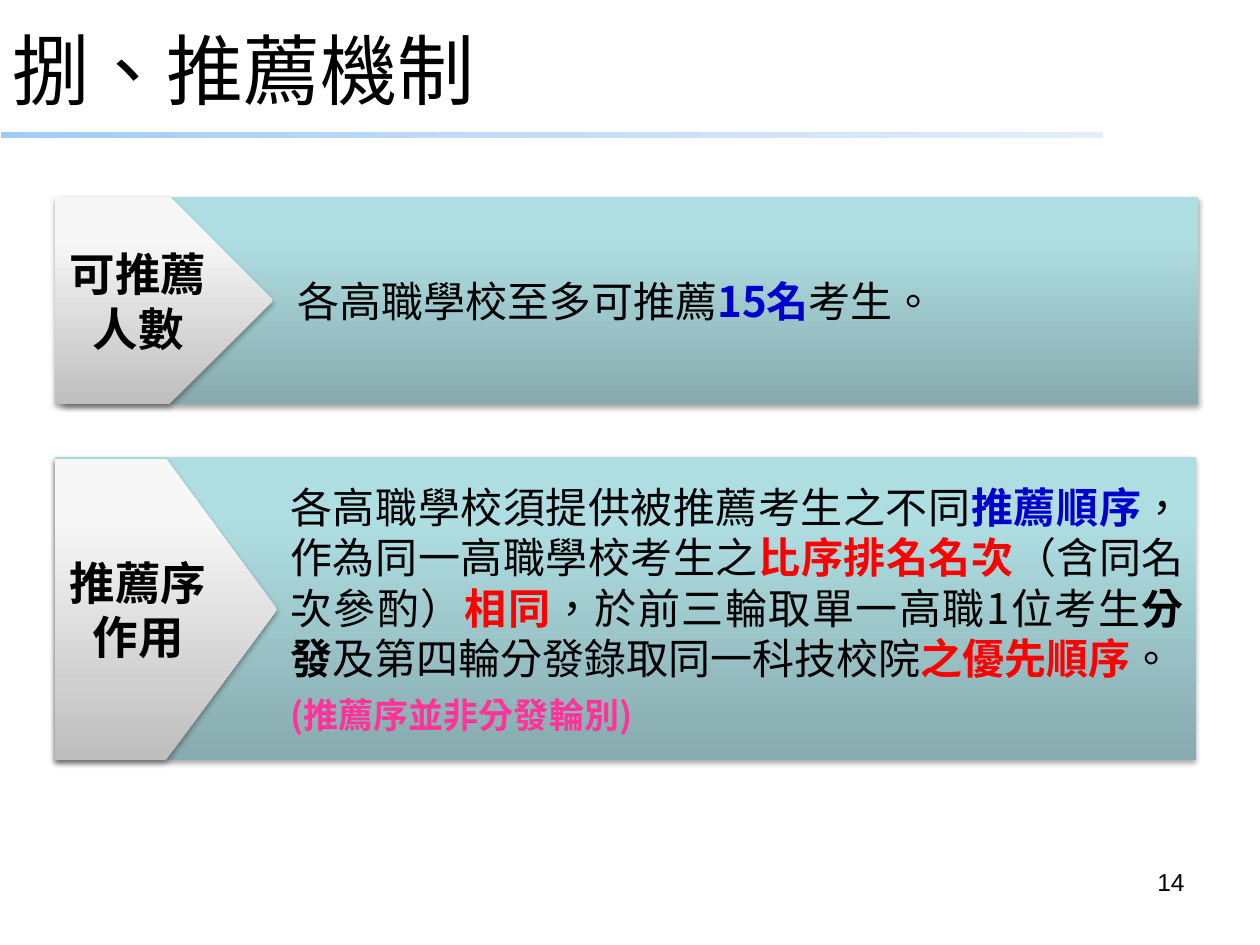
from lxml.etree import SubElement
from pptx import Presentation
from pptx.dml.color import RGBColor
from pptx.enum.shapes import MSO_SHAPE
from pptx.enum.text import MSO_ANCHOR, PP_ALIGN
from pptx.oxml.ns import qn
from pptx.util import Pt

PX = 914400 / 126
SANS = "Noto Sans CJK SC"
BLACK, BLUE, RED, PINK = "000000", "0000CC", "FF0000", "FF3399"
TEAL = [(0, "87ABAE"), (80, "AFDEE2"), (100, "AFE0E4")]
GREY = [(0, "BEBEBE"), (80, "F7F7F7"), (100, "F8F8F8")]
SKY = [(0, "9FCCF6"), (50, "C4DEF8"), (100, "E2EEFB")]


def add_gradient_shape(kind, box, stops, angle, shadow=True):
    sp = s.shapes.add_shape(kind, *[round(v * PX) for v in box])
    sp.line.fill.background()
    sp.fill.gradient()
    sp.fill.gradient_angle = angle
    props = sp._element.spPr
    stop_list = props.find(qn("a:gradFill")).find(qn("a:gsLst"))
    for old in list(stop_list):
        stop_list.remove(old)
    for pos, color in stops:
        stop = SubElement(stop_list, qn("a:gs"), pos=str(pos * 1000))
        SubElement(stop, qn("a:srgbClr"), val=color)
    sp.shadow.inherit = False
    if shadow:
        outer = SubElement(props.find(qn("a:effectLst")), qn("a:outerShdw"),
                           blurRad=str(Pt(3.1)), dist=str(Pt(1.8)),
                           dir="5400000", rotWithShape="0")
        color = SubElement(outer, qn("a:srgbClr"), val=BLACK)
        SubElement(color, qn("a:alpha"), val="35000")
    sp.text_frame.word_wrap = True
    sp.text_frame.vertical_anchor = MSO_ANCHOR.MIDDLE
    return sp


def add_run(p, text, size, color=BLACK, bold=False, font=SANS):
    r = p.add_run()
    r.text = text
    r.font.size = Pt(size)
    r.font.bold = bold
    r.font.color.rgb = RGBColor.from_string(color)
    r.font.name = font
    props = r._r.get_or_add_rPr()
    props.set("lang", "zh-TW")
    SubElement(props, qn("a:ea"), typeface=font)


prs = Presentation()
prs.slide_width, prs.slide_height = round(1260 * PX), round(945 * PX)
s = prs.slides.add_slide(prs.slide_layouts[6])

# Title, rule below it and page number
add_gradient_shape(MSO_SHAPE.RECTANGLE, (1, 132, 1102, 6), SKY, 45, shadow=False)
for box, text, size, font, align, anchor in [
    ((0, 25, 1134, 87), "捌、推薦機制", 44, "Noto Sans CJK JP",
     PP_ALIGN.LEFT, MSO_ANCHOR.MIDDLE),
    ((903, 861, 294, 65), "14", 14, "Arial", PP_ALIGN.RIGHT, MSO_ANCHOR.TOP),
]:
    tf = s.shapes.add_textbox(*[round(v * PX) for v in box]).text_frame
    tf.word_wrap = True
    tf.vertical_anchor = anchor
    tf.paragraphs[0].alignment = align
    add_run(tf.paragraphs[0], text, size, font=font)

# Teal bars: box, alignment, left margin, first-line indent, paragraphs of runs
bars = [
    ((62, 197, 1136, 207), PP_ALIGN.LEFT, 0, 223, [[
        ("各高職學校至多可推薦", 24), ("15名", 24, BLUE, True), ("考生。", 24)]]),
    ((55, 457, 1141, 303), PP_ALIGN.JUSTIFY, 223, 0, [[
        ("各高職學校須提供被推薦考生之不同", 24),
        ("推薦順序", 24, BLUE, True),
        ("，作為同一高職學校考生之", 24),
        ("比序排名名次", 24, RED, True),
        ("（含同名次參酌）", 24),
        ("相同", 24, RED, True),
        ("，於前三輪取單一高職1位考生", 24),
        ("分發", 24, BLACK, True),
        ("及第四輪分發錄取同一科技校院", 24),
        ("之優先順序", 24, RED, True),
        ("。", 24)],
        [("(推薦序並非分發輪別)", 20, PINK, True)]]),
]
for box, align, margin, indent, paragraphs in bars:
    sp = add_gradient_shape(MSO_SHAPE.PENTAGON, box, TEAL, 90)
    sp.adjustments[0] = 0
    tf = sp.text_frame
    for i, runs in enumerate(paragraphs):
        p = tf.add_paragraph() if i else tf.paragraphs[0]
        p.alignment = align
        if i:
            p.space_before = Pt(6)
        props = p._p.get_or_add_pPr()
        props.set("marL", str(round(margin * PX)))
        props.set("indent", str(round(indent * PX)))
        for run in runs:
            add_run(p, *run)

# Grey arrow labels over the left ends of the bars
for box, text in [((55, 197, 218, 207), "可推薦人數"),
                  ((55, 459, 222, 301), "推薦序作用")]:
    sp = add_gradient_shape(MSO_SHAPE.PENTAGON, box, GREY, 90)
    p = sp.text_frame.paragraphs[0]
    p.alignment = PP_ALIGN.CENTER
    add_run(p, text, 26, bold=True)

prs.save("out.pptx")
